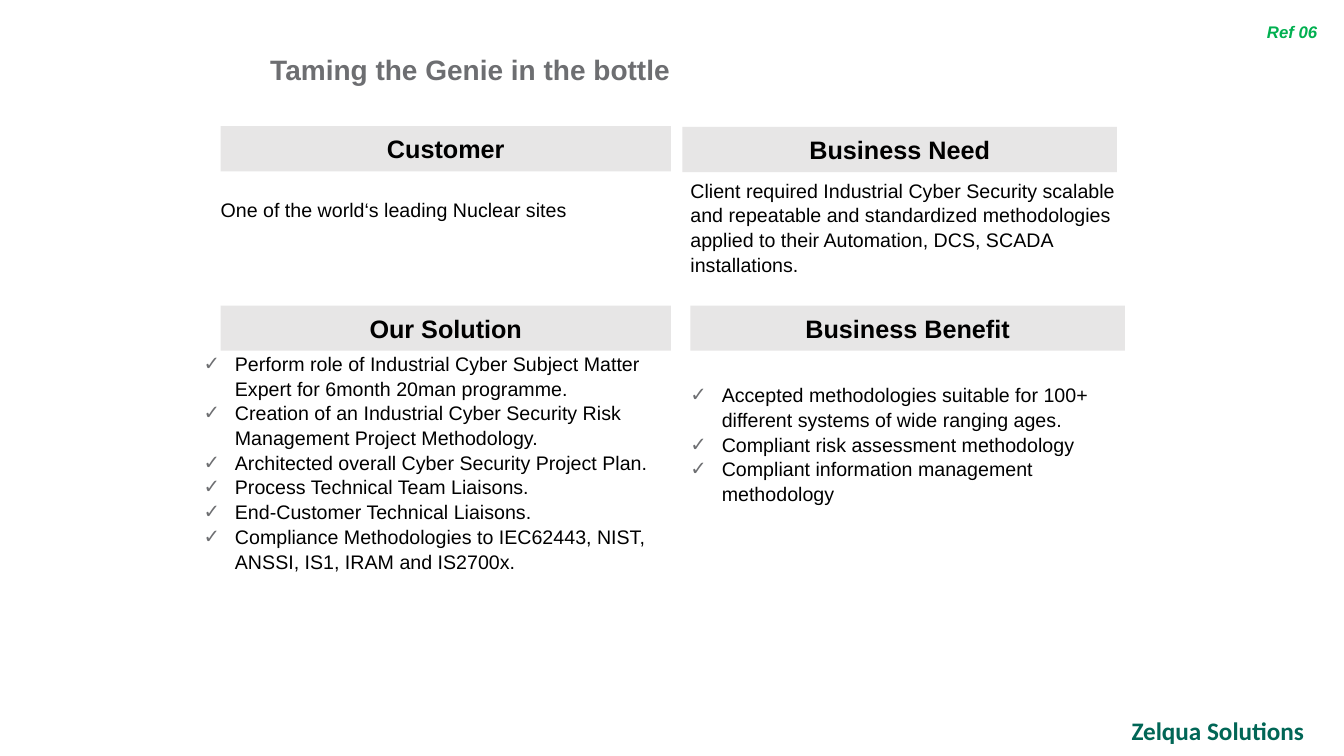
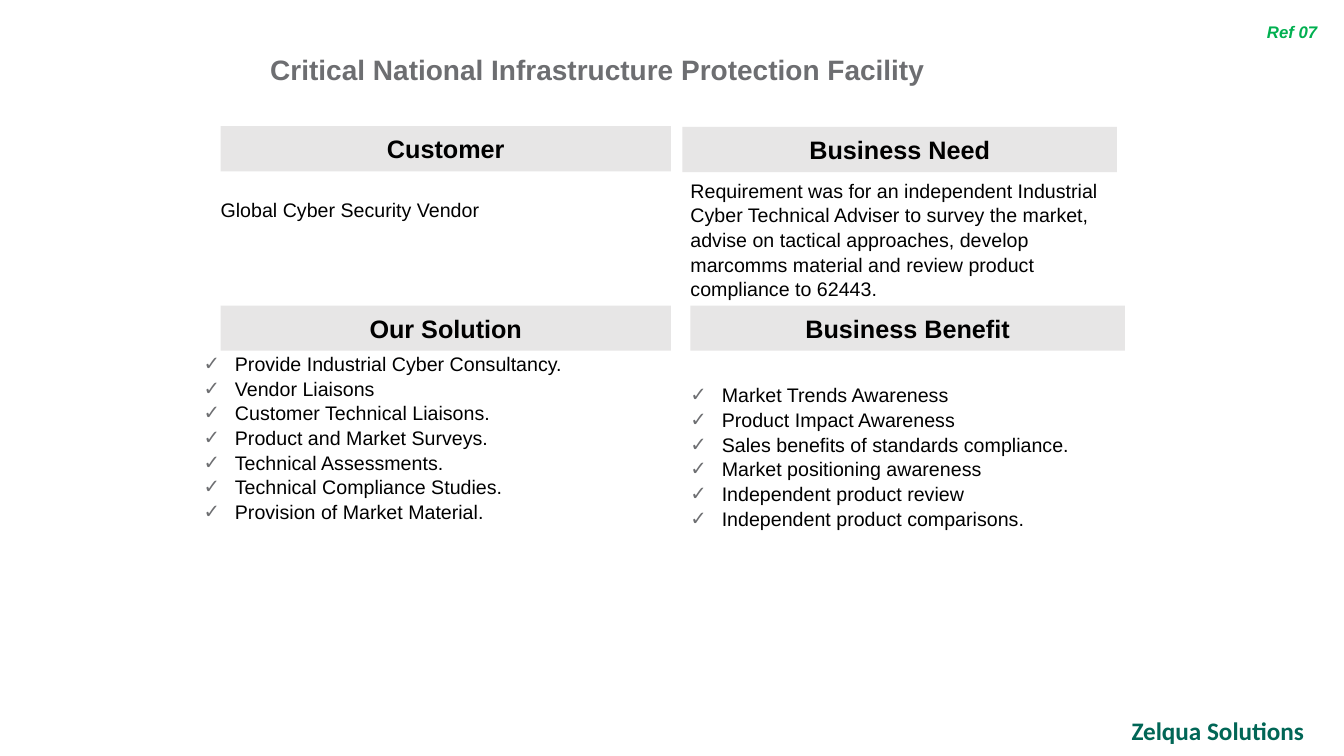
"""Builds two customer reference slides with customer, need, solution and benefit panels."""
import dataclasses

import lxml.etree
import pptx
import pptx.dml.color
import pptx.enum.shapes
import pptx.enum.text
import pptx.oxml.ns
import pptx.util

Cm = pptx.util.Cm
ALIGN = pptx.enum.text.PP_ALIGN
ANCHOR = pptx.enum.text.MSO_ANCHOR


@dataclasses.dataclass(frozen=True)
class Theme:
    font: str = "Arial"
    brand_font: str = "Calibri"
    ink: str = "000000"
    grey: str = "6D6E71"
    band: str = "E7E6E6"
    brand: str = "016656"
    reference: str = "00B050"
    title_size: int = 20
    heading_size: int = 18
    body_size: int = 14
    reference_size: int = 12
    line_spacing: float = 1.05
    bullet_indent: float = 0.79


HEADINGS = (
    ("Customer", (5.56, 3.18, 11.35, 1.14)),
    ("Business Need", (17.2, 3.2, 10.95, 1.14)),
    ("Our Solution", (5.56, 7.7, 11.35, 1.14)),
    ("Business Benefit", (17.4, 7.7, 10.95, 1.14)),
)

REFERENCES = (
    {
        "reference": "Ref 06",
        "title": "Taming the Genie in the bottle",
        "customer": "One of the world‘s leading Nuclear sites",
        "need": "Client required Industrial Cyber Security scalable and repeatable and "
                "standardized methodologies applied to their Automation, DCS, SCADA "
                "installations.",
        "solution": (
            "Perform role of Industrial Cyber Subject Matter Expert for 6month 20man programme.",
            "Creation of an Industrial Cyber Security Risk Management Project Methodology.",
            "Architected overall Cyber Security Project Plan.",
            "Process Technical Team Liaisons.",
            "End-Customer Technical Liaisons.",
            "Compliance Methodologies to IEC62443, NIST, ANSSI, IS1, IRAM and IS2700x.",
        ),
        "benefit": (
            "Accepted methodologies suitable for 100+ different systems of wide ranging ages.",
            "Compliant risk assessment methodology",
            "Compliant information management methodology",
        ),
    },
    {
        "reference": "Ref 07",
        "title": "Critical National Infrastructure Protection Facility",
        "customer": "Global Cyber Security Vendor",
        "need": "Requirement was for an independent Industrial Cyber Technical Adviser to "
                "survey the market, advise on tactical approaches, develop marcomms "
                "material and review product compliance to 62443.",
        "solution": (
            "Provide Industrial Cyber Consultancy.",
            "Vendor Liaisons",
            "Customer Technical Liaisons.",
            "Product and Market Surveys.",
            "Technical Assessments.",
            "Technical Compliance Studies.",
            "Provision of Market Material.",
        ),
        "benefit": (
            "Market Trends Awareness",
            "Product Impact Awareness",
            "Sales benefits of standards compliance.",
            "Market positioning awareness",
            "Independent product review",
            "Independent product comparisons.",
        ),
    },
)


class ReferenceDeck:
    def __init__(self, theme):
        self.theme = theme
        self.deck = pptx.Presentation()
        self.deck.slide_width, self.deck.slide_height = Cm(33.87), Cm(19.05)
        self.layout = self.deck.slide_layouts.get_by_name("Comparison")
        self.slide = None

    def new_slide(self):
        self.slide = self.deck.slides.add_slide(self.layout)

    def style(self, shape, size, color, font=None, bold=False, italic=False,
              align=ALIGN.LEFT, anchor=ANCHOR.TOP, spacing=None, inset=0):
        frame = shape.text_frame
        frame.word_wrap = True
        frame.auto_size = pptx.enum.text.MSO_AUTO_SIZE.NONE
        frame.vertical_anchor = anchor
        frame.margin_left = frame.margin_right = Cm(inset)
        frame.margin_top = frame.margin_bottom = Cm(inset / 2)
        for paragraph in frame.paragraphs:
            paragraph.alignment = align
            paragraph.space_before = pptx.util.Pt(0)
            paragraph.line_spacing = spacing or self.theme.line_spacing
            for run in paragraph.runs:
                run.font.name = font or self.theme.font
                run.font.size = pptx.util.Pt(size)
                run.font.bold = bold
                run.font.italic = italic
                run.font.color.rgb = pptx.dml.color.RGBColor.from_string(color)

    def placeholder(self, index, text, box):
        holder = self.slide.placeholders[index]
        holder.left, holder.top, holder.width, holder.height = map(Cm, box)
        holder.text_frame.text = text
        return holder

    def textbox(self, text, box):
        label = self.slide.shapes.add_textbox(*map(Cm, box))
        label.text_frame.text = text
        return label

    def title(self, text):
        heading = self.placeholder(0, text, (6.81, 1.27, 25.6, 0.86))
        self.style(heading, self.theme.title_size, self.theme.grey, bold=True)

    def statement(self, index, text, box):
        self.style(self.placeholder(index, text, box), self.theme.body_size, self.theme.ink)

    def checklist(self, index, items, box):
        checks = self.placeholder(index, "\n".join(items), box)
        qn = pptx.oxml.ns.qn
        indent = Cm(self.theme.bullet_indent)
        for paragraph in checks.text_frame.paragraphs:
            properties = paragraph._p.get_or_add_pPr()
            properties.set("marL", str(indent))
            properties.set("indent", str(-indent))
            tint = lxml.etree.SubElement(properties, qn("a:buClr"))
            lxml.etree.SubElement(tint, qn("a:srgbClr"), val=self.theme.grey)
            lxml.etree.SubElement(properties, qn("a:buFont"), typeface=self.theme.font)
            lxml.etree.SubElement(properties, qn("a:buChar"), char="✓")
        self.style(checks, self.theme.body_size, self.theme.ink)

    def band(self, text, box):
        band = self.slide.shapes.add_shape(
            pptx.enum.shapes.MSO_SHAPE.RECTANGLE, *map(Cm, box))
        band.shadow.inherit = False
        band.fill.solid()
        band.fill.fore_color.rgb = pptx.dml.color.RGBColor.from_string(self.theme.band)
        band.line.fill.background()
        band.text_frame.text = text
        self.style(band, self.theme.heading_size, self.theme.ink, bold=True,
                   align=ALIGN.CENTER, anchor=ANCHOR.MIDDLE, spacing=1.0, inset=0.25)

    def reference(self, text):
        label = self.textbox(text, (31.93, 0.53, 1.94, 0.51))
        self.style(label, self.theme.reference_size, self.theme.reference,
                   bold=True, italic=True)

    def shared_footer(self, text):
        footer = self.textbox(text, (25.53, 17.91, 7.59, 1.02))
        self.style(footer, self.theme.heading_size, self.theme.brand,
                   font=self.theme.brand_font, bold=True, align=ALIGN.RIGHT,
                   spacing=1.0, inset=0.25)
        footer.element.nvSpPr.cNvPr.set("id", "50")
        self.layout.shapes.element.append(footer.element)

    def reference_slide(self, content):
        self.new_slide()
        for text, box in HEADINGS:
            self.band(text, box)
        self.title(content["title"])
        self.statement(1, content["customer"], (5.56, 4.95, 11.35, 1.12))
        self.statement(3, content["need"], (17.4, 4.47, 10.95, 3.0))
        self.checklist(2, content["solution"], (5.13, 8.84, 11.79, 6.0))
        self.checklist(4, content["benefit"], (17.4, 9.63, 10.74, 5.4))
        self.reference(content["reference"])


def main():
    builder = ReferenceDeck(Theme())
    for content in REFERENCES:
        builder.reference_slide(content)
    builder.shared_footer("Zelqua Solutions")
    builder.deck.save("out.pptx")


if __name__ == "__main__":
    main()
